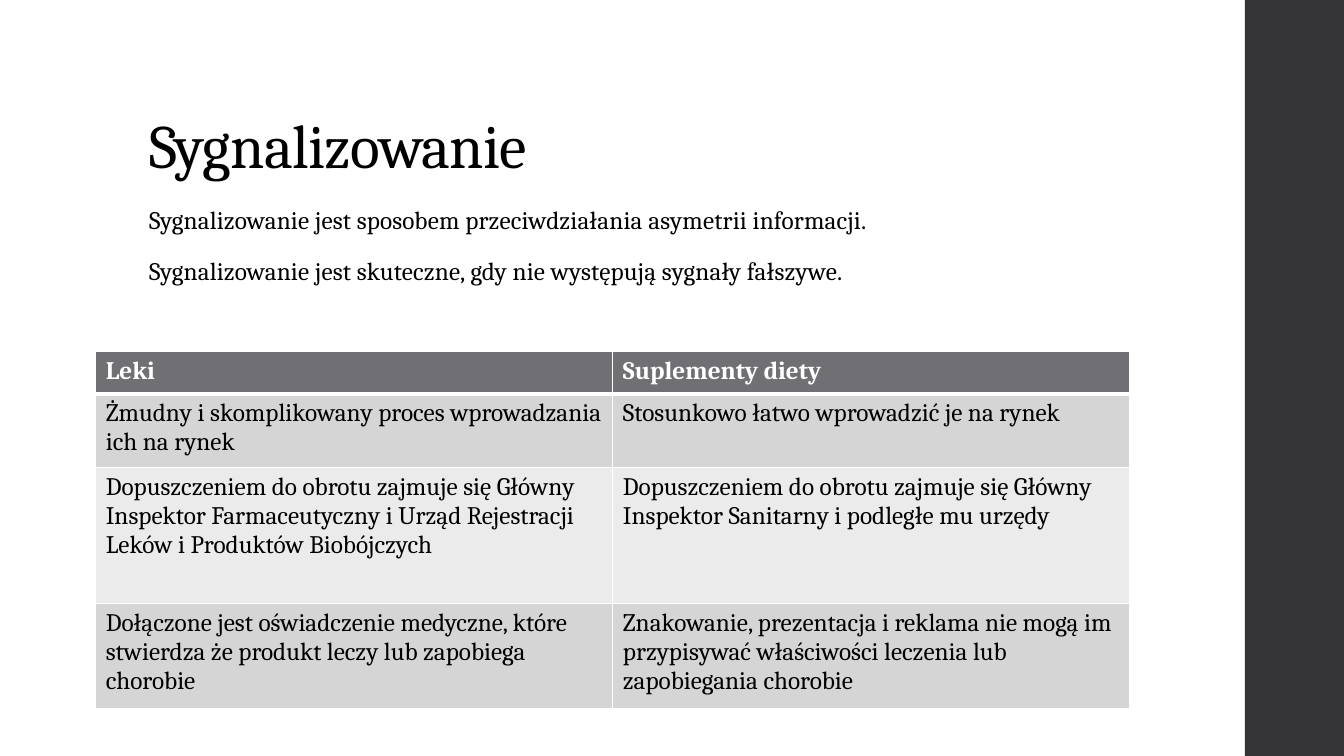
from lxml import etree
from pptx import Presentation
from pptx.dml.color import RGBColor
from pptx.enum.shapes import MSO_SHAPE
from pptx.enum.text import MSO_ANCHOR
from pptx.oxml.ns import qn
from pptx.util import Pt

RECTANGLE = MSO_SHAPE.RECTANGLE
TOP, BOTTOM = MSO_ANCHOR.TOP, MSO_ANCHOR.BOTTOM

# Content
TITLE = "Sygnalizowanie"
STATEMENTS = [
    "Sygnalizowanie jest sposobem przeciwdziałania asymetrii informacji.",
    "Sygnalizowanie jest skuteczne, gdy nie występują sygnały fałszywe.",
]
COMPARISON = [
    ("Leki", "Suplementy diety"),
    ("Żmudny i skomplikowany proces wprowadzania ich na rynek",
     "Stosunkowo łatwo wprowadzić je na rynek"),
    ("Dopuszczeniem do obrotu zajmuje się Główny Inspektor Farmaceutyczny "
     "i Urząd Rejestracji Leków i Produktów Biobójczych",
     "Dopuszczeniem do obrotu zajmuje się Główny Inspektor Sanitarny "
     "i podległe mu urzędy"),
    ("Dołączone jest oświadczenie medyczne, które stwierdza że produkt leczy "
     "lub zapobiega chorobie",
     "Znakowanie, prezentacja i reklama nie mogą im przypisywać właściwości "
     "leczenia lub zapobiegania chorobie"),
]

# Style and measures in points
FONT = "Cambria"
BLACK = RGBColor(0x00, 0x00, 0x00)
WHITE = RGBColor(0xFF, 0xFF, 0xFF)
STRIP = RGBColor(0x35, 0x35, 0x37)
HEADER = RGBColor(0x6F, 0x6F, 0x74)
BANDS = [RGBColor(0xEB, 0xEB, 0xEB), RGBColor(0xD5, 0xD5, 0xD6)]
PAGE_WIDTH, PAGE_HEIGHT = 960, 540
STRIP_LEFT, STRIP_WIDTH = 889.2, 72
TEXT_LEFT = 99.4
TABLE_LEFT, TABLE_TOP = 68.4, 251.3
COLUMN_WIDTH = 369.4
ROW_HEIGHTS = [30.2, 52.4, 97.2, 74.9]
THIN, THICK = 1, 3


def add_span(para, text, size, color, bold=False, tracking=0):
    span = para.add_run()
    span.text = text
    span.font.name = FONT
    span.font.size = Pt(size)
    span.font.bold = bold
    span.font.color.rgb = color
    if tracking:
        span.font._element.set("spc", str(tracking))


def add_text(page, place, lines, anchor, size, spacing, tracking, before=0, after=0):
    box = page.shapes.add_textbox(*[Pt(length) for length in place])
    frame = box.text_frame
    frame.word_wrap = True
    frame.vertical_anchor = anchor
    for index, line in enumerate(lines):
        para = frame.add_paragraph() if index else frame.paragraphs[0]
        para.line_spacing = spacing
        para.space_before = Pt(before)
        para.space_after = Pt(after)
        add_span(para, line, size, BLACK, tracking=tracking)


def set_borders(cell, top, bottom):
    properties = cell._tc.get_or_add_tcPr()
    for side, width in (("L", THIN), ("R", THIN), ("T", top), ("B", bottom)):
        line = etree.SubElement(properties, qn("a:ln" + side), w=str(Pt(width)))
        fill = etree.SubElement(line, qn("a:solidFill"))
        etree.SubElement(fill, qn("a:srgbClr"), val=str(WHITE))


def add_comparison(page):
    table = page.shapes.add_table(
        len(COMPARISON), 2, Pt(TABLE_LEFT), Pt(TABLE_TOP),
        Pt(2 * COLUMN_WIDTH), Pt(sum(ROW_HEIGHTS))).table
    for column in table.columns:
        column.width = Pt(COLUMN_WIDTH)
    for row, (texts, height) in enumerate(zip(COMPARISON, ROW_HEIGHTS)):
        table.rows[row].height = Pt(height)
        is_header = row == 0
        for column, text in enumerate(texts):
            cell = table.cell(row, column)
            set_borders(cell, THICK if row == 1 else THIN,
                        THICK if is_header else THIN)
            cell.fill.solid()
            cell.fill.fore_color.rgb = HEADER if is_header else BANDS[row % 2]
            add_span(cell.text_frame.paragraphs[0], text, 18,
                     WHITE if is_header else BLACK, bold=is_header)


def main():
    deck = Presentation()
    deck.slide_width, deck.slide_height = Pt(PAGE_WIDTH), Pt(PAGE_HEIGHT)
    page = deck.slides.add_slide(deck.slide_layouts[6])

    # Dark strip on the right
    strip = page.shapes.add_shape(RECTANGLE, Pt(STRIP_LEFT), Pt(0),
                                  Pt(STRIP_WIDTH), Pt(PAGE_HEIGHT))
    strip.shadow.inherit = False
    strip.fill.solid()
    strip.fill.fore_color.rgb = STRIP
    strip.line.fill.background()

    # Title and statements
    add_text(page, (TEXT_LEFT, 28.8, 763.2, 104.4), [TITLE], BOTTOM,
             size=44, spacing=0.9, tracking=-50)
    add_text(page, (TEXT_LEFT, 144, 676.8, 342.7), STATEMENTS, TOP,
             size=18, spacing=0.95, tracking=10, before=14, after=2)

    # Comparison table
    add_comparison(page)
    deck.save("out.pptx")


if __name__ == "__main__":
    main()
